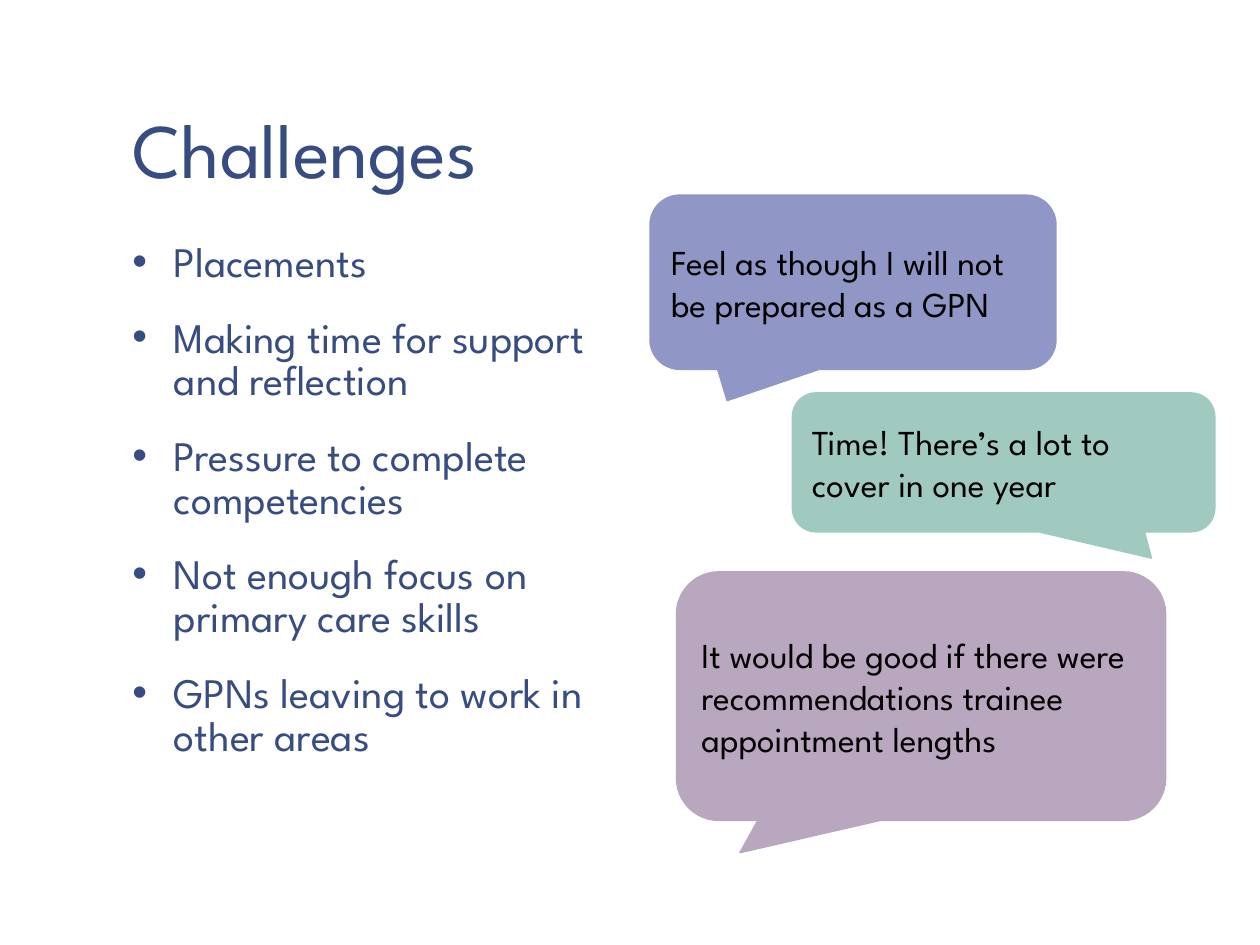
"""Build the slide on challenges, with a bullet list and three speech bubbles."""
from lxml import etree
from pptx import Presentation
from pptx.dml.color import RGBColor
from pptx.enum.shapes import MSO_SHAPE as Shape
from pptx.enum.text import MSO_ANCHOR as Anchor
from pptx.oxml.ns import qn
from pptx.util import Inches, Pt

FONT = "League Spartan"
NAVY, BLACK = "374C81", "000000"
TITLE = "Challenges"
POINTS = [
    "Placements",
    "Making time for support and reflection",
    "Pressure to complete competencies",
    "Not enough focus on primary care skills",
    "GPNs leaving to work in other areas",
]
QUOTES = [
    ("Feel as though I will not be prepared as a GPN",
     (5.16, 1.55, 3.22, 1.38), (-0.31, 0.68), "9097C6"),
    ("Time! There’s a lot to cover in one year",
     (6.29, 3.12, 3.35, 1.1), (0.35, 0.69), "A0CAC0"),
    ("It would be good if there were recommendations trainee appointment lengths",
     (5.37, 4.54, 3.88, 1.97), (-0.37, 0.63), "B9A6BF"),
]


def color(code):
    return RGBColor.from_string(code)


def write(para, text, size, code):
    run = para.add_run()
    run.text = text
    run.font.name = FONT
    run.font.size = Pt(size)
    run.font.color.rgb = color(code)


def add_box(slide, place, anchor):
    frame = slide.shapes.add_textbox(*map(Inches, place)).text_frame
    frame.word_wrap = True
    frame.vertical_anchor = anchor
    frame.margin_left = frame.margin_right = Inches(0.13)
    frame.margin_top = frame.margin_bottom = Inches(0.07)
    return frame


def add_title(slide):
    para = add_box(slide, (0.92, 0.08, 8.33, 1.53), Anchor.BOTTOM).paragraphs[0]
    para.line_spacing = 0.85
    write(para, TITLE, 44, NAVY)


def add_list(slide):
    frame = add_box(slide, (0.92, 1.86, 4.08, 4.89), Anchor.TOP)
    for i, text in enumerate(POINTS):
        para = frame.add_paragraph() if i else frame.paragraphs[0]
        para.line_spacing = 0.85
        para.space_before = Pt(18.7 if i else 0)
        props = para._p.get_or_add_pPr()
        props.set("marL", str(Inches(0.33)))
        props.set("indent", str(-Inches(0.33)))
        etree.SubElement(props, qn("a:buFont"), typeface="Arial")
        etree.SubElement(props, qn("a:buChar"), char="•")
        write(para, text, 24, NAVY)


def add_quote(slide, text, place, tip, code):
    kind = Shape.ROUNDED_RECTANGULAR_CALLOUT
    shape = slide.shapes.add_shape(kind, *map(Inches, place))
    shape.shadow.inherit = False
    for i, value in enumerate((*tip, 0.17)):
        shape.adjustments[i] = value
    shape.fill.solid()
    shape.fill.fore_color.rgb = color(code)
    shape.line.color.rgb = color(code)
    shape.line.width = Pt(1)
    frame = shape.text_frame
    frame.word_wrap = True
    frame.vertical_anchor = Anchor.MIDDLE
    para = frame.paragraphs[0]
    para.alignment = 1
    write(para, text, 20, BLACK)


def main():
    deck = Presentation()
    deck.slide_width, deck.slide_height = Inches(10), Inches(7.5)
    slide = deck.slides.add_slide(deck.slide_layouts[6])
    add_title(slide)
    add_list(slide)
    for quote in QUOTES:
        add_quote(slide, *quote)
    deck.save("out.pptx")


if __name__ == "__main__":
    main()
